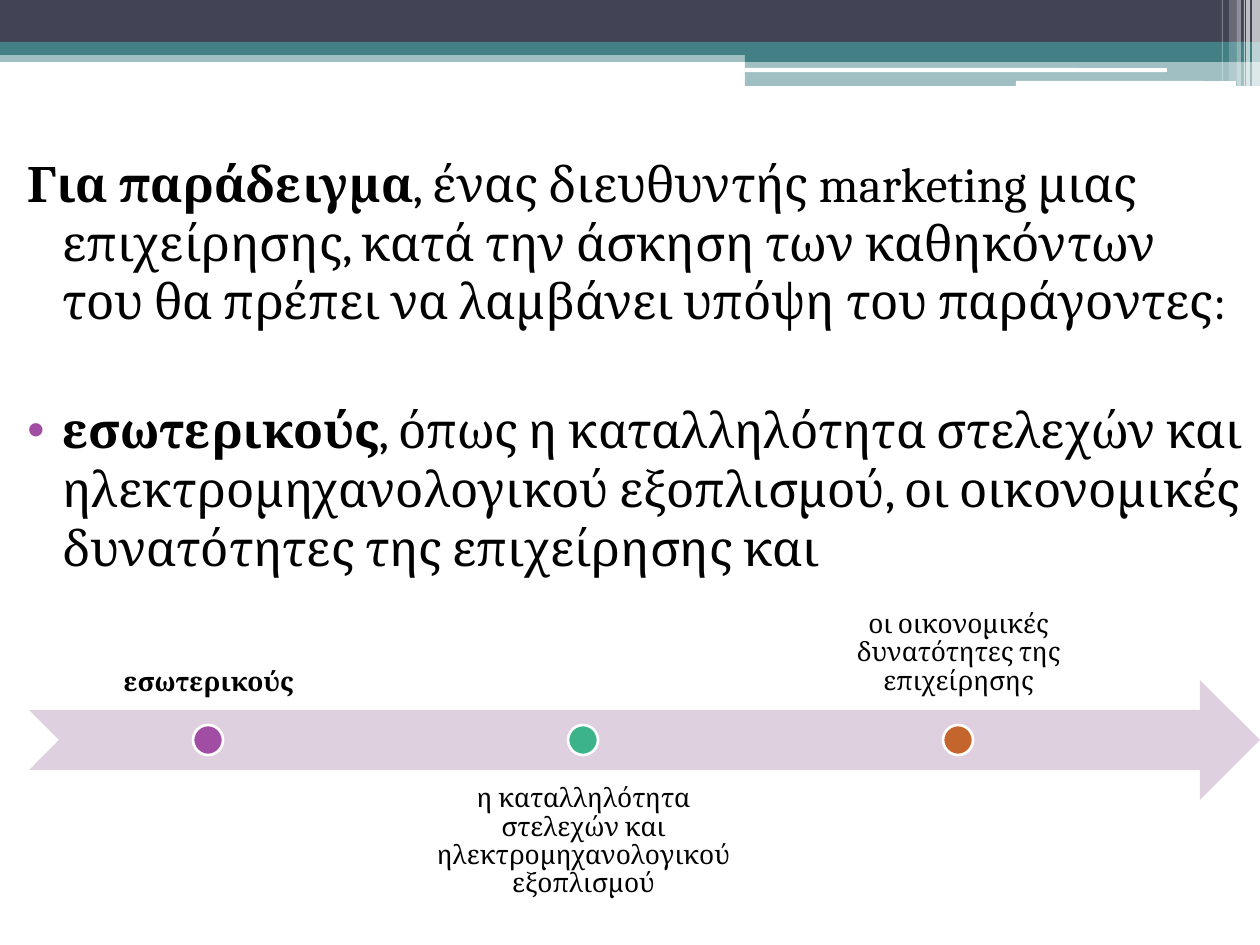
from dataclasses import dataclass

from lxml.etree import SubElement
from pptx import Presentation
from pptx.dml.color import RGBColor
from pptx.enum.shapes import MSO_SHAPE as Shape
from pptx.enum.text import MSO_ANCHOR as Anchor, PP_ALIGN as Align
from pptx.oxml.ns import qn
from pptx.util import Emu, Pt

PX_PER_INCH = 126


def px(length):
    return Emu(round(length * 914400 / PX_PER_INCH))


@dataclass(frozen=True)
class Theme:
    font: str = "Cambria"
    body_size: int = 28
    label_size: int = 15
    ink: str = "000000"
    white: str = "FFFFFF"
    slate: str = "424456"
    teal: str = "438086"
    arrow: str = "DFD0E0"
    purple: str = "A04DA3"
    green: str = "3DB38C"
    orange: str = "C4652D"


class Painter:
    def __init__(self, page, theme):
        self.page = page
        self.theme = theme

    def shape(self, kind, box, color, opacity=100, outline=None):
        shape = self.page.shapes.add_shape(kind, *map(px, box))
        shape.shadow.inherit = False
        shape.fill.solid()
        shape.fill.fore_color.rgb = RGBColor.from_string(color)
        if opacity < 100:
            tint = shape._element.spPr.find(".//" + qn("a:srgbClr"))
            SubElement(tint, qn("a:alpha"), val=str(opacity * 1000))
        if outline:
            shape.line.color.rgb = RGBColor.from_string(outline)
            shape.line.width = Pt(1.5)
        else:
            shape.line.fill.background()

    def text_frame(self, box, anchor=Anchor.TOP):
        frame = self.page.shapes.add_textbox(*map(px, box)).text_frame
        frame.word_wrap = True
        frame.vertical_anchor = anchor
        return frame

    def add_spans(self, paragraph, spans, size):
        paragraph.font.name = self.theme.font
        paragraph.font.size = Pt(size)
        paragraph.font.color.rgb = RGBColor.from_string(self.theme.ink)
        for text, bold in spans:
            span = paragraph.add_run()
            span.text = text
            span.font.bold = bold

    def body(self, box, entries):
        frame = self.text_frame(box)
        for index, (lead, rest, space, bullet) in enumerate(entries):
            paragraph = frame.add_paragraph() if index else frame.paragraphs[0]
            paragraph.space_before = Pt(space)
            self.add_spans(paragraph, [(lead, True), (rest, False)], self.theme.body_size)
            self.hang(paragraph, bullet)

    def hang(self, paragraph, bullet):
        properties = paragraph._p.get_or_add_pPr()
        properties.set("marL", str(px(50)))
        properties.set("indent", str(px(-35)))
        if bullet:
            marks = [
                properties.makeelement(qn("a:buClr"), {}),
                properties.makeelement(qn("a:buFont"), {"typeface": "Arial"}),
                properties.makeelement(qn("a:buChar"), {"char": "•"}),
            ]
            SubElement(marks[0], qn("a:srgbClr"), val=self.theme.purple)
            position = properties.index(properties.find(qn("a:defRPr")))
            properties[position:position] = marks

    def label(self, box, text, bold, anchor):
        frame = self.text_frame(box, anchor)
        frame.margin_left = frame.margin_right = px(15)
        frame.margin_top = frame.margin_bottom = px(15)
        paragraph = frame.paragraphs[0]
        paragraph.alignment = Align.CENTER
        paragraph.line_spacing = 0.9
        self.add_spans(paragraph, [(text, bold)], self.theme.label_size)


def draw_header(painter, theme):
    bands = [
        (Shape.RECTANGLE, (0, 50, 1260, 12), theme.teal, 50),
        (Shape.RECTANGLE, (0, 0, 1260, 42), theme.slate, 100),
        (Shape.RECTANGLE, (0, 42, 1260, 13), theme.teal, 100),
        (Shape.RECTANGLE, (745, 49, 515, 13), theme.teal, 100),
        (Shape.RECTANGLE, (745, 61, 515, 25), theme.teal, 50),
        (Shape.ROUNDED_RECTANGLE, (745, 68, 422, 4), theme.white, 100),
        (Shape.ROUNDED_RECTANGLE, (1016, 81, 220, 5), theme.white, 100),
    ]
    for kind, box, color, opacity in bands:
        painter.shape(kind, box, color, opacity)
    stripes = [
        (1252, 8, 86, 65), (1246, 4, 86, 65), (1244, 1, 86, 60),
        (1237, 4, 86, 40), (1229, 8, 81, 20), (1222, 1, 81, 30),
    ]
    for left, width, height, opacity in stripes:
        painter.shape(Shape.RECTANGLE, (left, 0, width, height), theme.white, opacity)


def draw_timeline(painter, theme):
    painter.shape(Shape.NOTCHED_RIGHT_ARROW, (29, 680, 1231, 120), theme.arrow)
    stops = [
        ("εσωτερικούς", True, theme.purple),
        ("η καταλληλότητα στελεχών και ηλεκτρομηχανολογικού εξοπλισμού", False, theme.green),
        ("οι οικονομικές δυνατότητες της επιχείρησης", False, theme.orange),
    ]
    for index, (text, bold, color) in enumerate(stops):
        left = 30 + 375 * index
        top, anchor = (770, Anchor.TOP) if index % 2 else (591, Anchor.BOTTOM)
        painter.label((left, top, 357, 120), text, bold, anchor)
        painter.shape(Shape.OVAL, (left + 163, 725, 30, 30), color, outline=theme.white)


def main():
    theme = Theme()
    deck = Presentation()
    deck.slide_width, deck.slide_height = px(1260), px(945)
    page = deck.slides.add_slide(deck.slide_layouts[6])
    painter = Painter(page, theme)
    draw_header(painter, theme)
    painter.body((0, 147, 1260, 798), [
        ("Για παράδειγμα",
         ", ένας διευθυντής marketing μιας επιχείρησης, κατά την άσκηση των "
         "καθηκόντων του θα πρέπει να λαμβάνει υπόψη του παράγοντες:", 3, False),
        ("εσωτερικούς",
         ", όπως η καταλληλότητα στελεχών και ηλεκτρομηχανολογικού εξοπλισμού, "
         "οι οικονομικές δυνατότητες της επιχείρησης και", 40, True),
    ])
    draw_timeline(painter, theme)
    deck.save("out.pptx")


if __name__ == "__main__":
    main()
